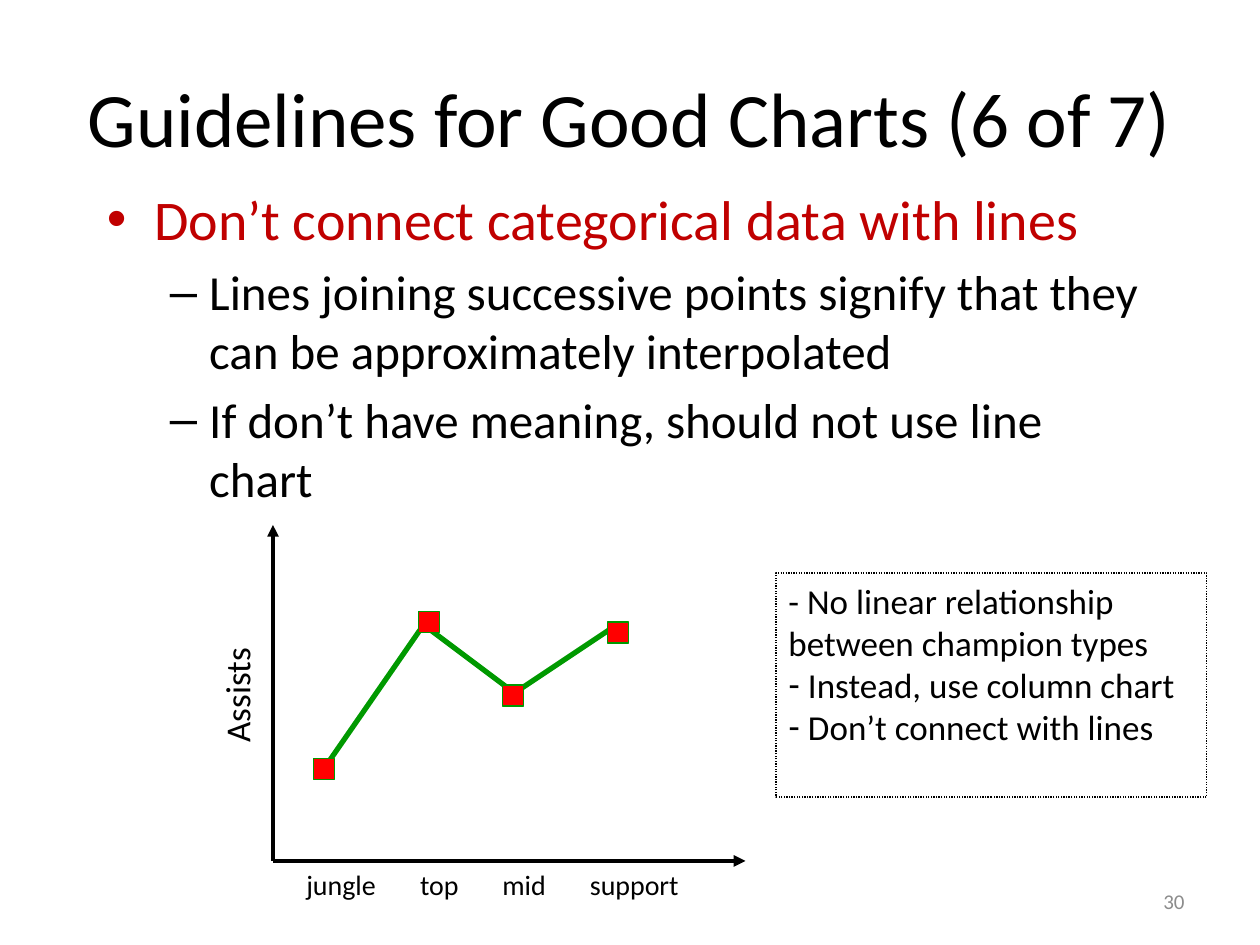
from lxml.etree import SubElement as Sub
from pptx import Presentation
from pptx.dml.color import RGBColor
from pptx.enum.dml import MSO_LINE as Dash
from pptx.enum.shapes import MSO_CONNECTOR as Link, MSO_SHAPE as Form
from pptx.enum.text import MSO_ANCHOR as Anchor, PP_ALIGN as Align
from pptx.oxml.ns import qn
from pptx.util import Pt

BLACK, RED, GREEN, MARK, GRAY = "000000", "C00000", "009900", "FF0000", "8C8C8C"


def tint(code):
    return RGBColor.from_string(code)


class Page:
    font = "Calibri"

    def __init__(self, slide):
        self.shapes = slide.shapes

    def style(self, para, size, color=BLACK):
        for run in para.runs:
            run.font.name = self.font
            run.font.size = Pt(size)
            run.font.color.rgb = tint(color)

    def bullet(self, para, sign, left=0, hang=0):
        props = para._p.get_or_add_pPr()
        props.set("marL", str(Pt(left)))
        props.set("indent", str(Pt(-hang)))
        Sub(props, qn("a:buFont"), typeface="Arial")
        Sub(props, qn("a:buChar"), char=sign)

    def text(self, words, box, size, color=BLACK, align=Align.LEFT,
             anchor=Anchor.TOP, wrap=True, turn=0):
        shape = self.shapes.add_textbox(*map(Pt, box))
        shape.rotation = turn
        frame = shape.text_frame
        frame.word_wrap = wrap
        frame.vertical_anchor = anchor
        frame.text = words
        para = frame.paragraphs[0]
        para.alignment = align
        self.style(para, size, color)

    def list(self, items, box):
        frame = self.shapes.add_textbox(*map(Pt, box)).text_frame
        frame.word_wrap = True
        frame.text = "\n".join(item[0] for item in items)
        for para, (_, level, size, color) in zip(frame.paragraphs, items):
            para.level = level
            para.space_before = Pt(size * 0.2)
            sign, left, hang = (("•", 27, 27), ("–", 58.5, 22.5))[level]
            self.bullet(para, sign, left, hang)
            self.style(para, size, color)

    def line(self, start, end, color, width, arrow=False):
        link = self.shapes.add_connector(Link.STRAIGHT, *map(Pt, start + end))
        link.line.color.rgb = tint(color)
        link.line.width = Pt(width)
        props = link._element.spPr
        if arrow:
            Sub(props.find(qn("a:ln")), qn("a:tailEnd"), type="triangle")
        Sub(props, qn("a:effectLst"))

    def rect(self, box, fill, color):
        shape = self.shapes.add_shape(Form.RECTANGLE, *map(Pt, box))
        shape.shadow.inherit = False
        if fill:
            shape.fill.solid()
            shape.fill.fore_color.rgb = tint(fill)
        else:
            shape.fill.background()
        shape.line.color.rgb = tint(color)
        shape.line.width = Pt(0.75)
        return shape

    def note(self, lines, box, size):
        shape = self.rect(box, None, BLACK)
        shape.line.dash_style = Dash.ROUND_DOT
        frame = shape.text_frame
        frame.word_wrap = True
        frame.vertical_anchor = Anchor.TOP
        frame.text = "\n".join(lines)
        for para in frame.paragraphs:
            para.alignment = Align.LEFT
            self.style(para, size)
        for para in frame.paragraphs[1:]:
            self.bullet(para, "-")


def main():
    deck = Presentation()
    deck.slide_width, deck.slide_height = Pt(720), Pt(540)
    page = Page(deck.slides.add_slide(deck.slide_layouts[6]))

    page.text("30", (516, 500.5, 168, 28.75), 12, GRAY, Align.RIGHT, Anchor.MIDDLE)
    page.text("Guidelines for Good Charts (6 of 7)", (36, 21.6, 648, 90), 44,
              align=Align.CENTER, anchor=Anchor.MIDDLE)
    page.list([
        ("Don’t connect categorical data with lines", 0, 32, RED),
        ("Lines joining successive points signify that they "
         "can be approximately interpolated", 1, 28, BLACK),
        ("If don’t have meaning, should not use line chart", 1, 28, BLACK),
    ], (54, 102, 612, 192))

    base = (156, 492)
    for tip in ((156, 300), (426, 492)):
        page.line(base, tip, BLACK, 2.25, arrow=True)
    for start, end in (((186, 438), (240, 360)),
                       ((246, 360), (294, 396)),
                       ((294, 396), (348, 360))):
        page.line(start, end, GREEN, 3)

    for word, left, width in (("jungle", 168, 54.7), ("top", 233, 36.7),
                              ("mid", 280, 39.6), ("support", 330, 66.2)):
        page.text(word, (left, 492, width, 26.6), 16, wrap=False)
    page.text("Assists", (100.8, 380.9, 69.1, 31.7), 20, wrap=False, turn=270)

    for left, top in ((179, 433.5), (239, 349.5), (287, 391.5), (347, 355.5)):
        page.rect((left, top, 12, 12), MARK, GREEN)

    page.note(["- No linear relationship between champion types",
               " Instead, use column chart",
               " Don’t connect with lines"], (443.5, 327.5, 246, 128), 20)
    deck.save("out.pptx")


if __name__ == "__main__":
    main()
